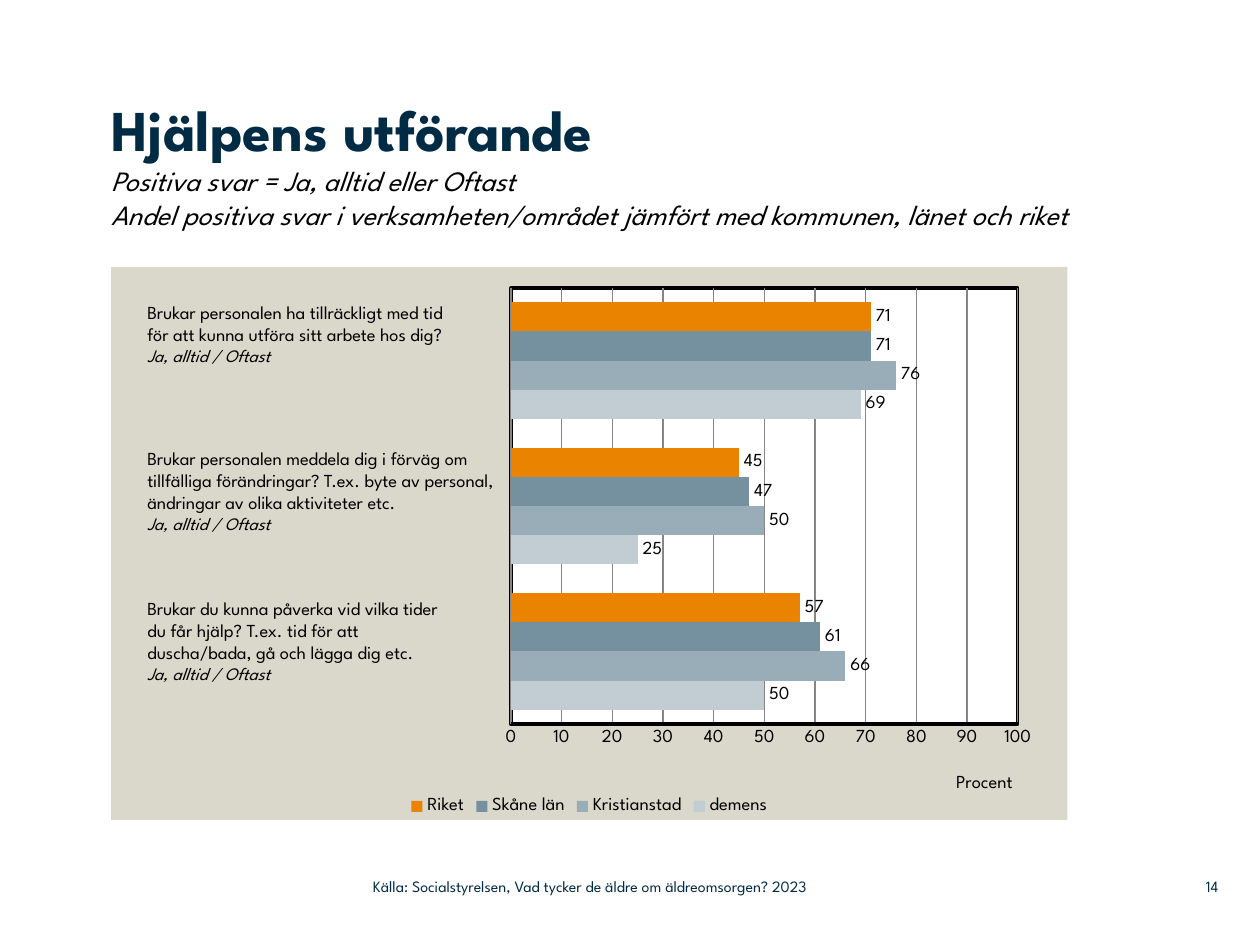
from lxml import etree
from pptx import Presentation
from pptx.chart.data import CategoryChartData
from pptx.dml.color import RGBColor
from pptx.enum import chart as ch, text
from pptx.oxml import parse_xml
from pptx.oxml.ns import nsdecls, qn
from pptx.util import Cm, Pt

FONT = "League Spartan"
COLORS = {"navy": "002B45", "black": "000000", "white": "FFFFFF",
          "panel": "DAD7CB", "grid": "868686"}
TITLE = "Hjälpens utförande"
SUBTITLE = ["Positiva svar = Ja, alltid eller Oftast",
            "Andel positiva svar i verksamheten/området jämfört med "
            "kommunen, länet och riket"]
ANSWER = "Ja, alltid / Oftast"
QUESTIONS = [  # top in cm, lines
    (5.94, ["Brukar personalen ha tillräckligt med tid",
            "för att kunna utföra sitt arbete hos dig?"]),
    (8.89, ["Brukar personalen meddela dig i förväg om tillfälliga "
            "förändringar? T.ex. byte av personal, ändringar av olika "
            "aktiviteter etc."]),
    (11.91, ["Brukar du kunna påverka vid vilka tider",
             "du får hjälp? T.ex. tid för att",
             "duscha/bada, gå och lägga dig etc."]),
]
SERIES = [  # name, values from the bottom group up, colour
    ("demens", (50, 25, 69), "C2CDD3"),
    ("Kristianstad", (66, 50, 76), "99ADB9"),
    ("Skåne län", (61, 47, 71), "75909F"),
    ("Riket", (57, 45, 71), "E98300"),
]
FOOTERS = [  # left, width in cm, alignment, text
    (23.37, 1.19, text.PP_ALIGN.RIGHT, "14"),
    (7.52, 11.25, text.PP_ALIGN.LEFT,
     "Källa: Socialstyrelsen, Vad tycker de äldre om äldreomsorgen? 2023"),
]


def rgb(value):
    return RGBColor.from_string(value)


def style(font, size, color="black", bold=False, italic=False):
    font.name, font.size = FONT, Pt(size)
    font.bold, font.italic = bold, italic
    font.color.rgb = rgb(COLORS[color])


def add_run(p, words, size, **look):
    r = p.add_run()
    r.text = words
    style(r.font, size, **look)


def no_margins(tf):
    tf.margin_left = tf.margin_right = tf.margin_top = tf.margin_bottom = 0


def add_box(s, left, top, width, height):
    tf = s.shapes.add_textbox(Cm(left), Cm(top), Cm(width), Cm(height)).text_frame
    tf.word_wrap = True
    return tf


def fill_properties(color, line=None):
    border = (f'<a:ln w="25400"><a:solidFill><a:srgbClr val="{line}"/>'
              "</a:solidFill></a:ln>" if line else "<a:ln><a:noFill/></a:ln>")
    return parse_xml(f'<c:spPr {nsdecls("c", "a")}><a:solidFill>'
                     f'<a:srgbClr val="{color}"/></a:solidFill>{border}</c:spPr>')


def set_layout(parent, index, **settings):
    """Place a chart part by fractions of the chart, as child number index."""
    for old in parent.findall(qn("c:layout")):
        parent.remove(old)
    layout = etree.Element(qn("c:layout"))
    manual = etree.SubElement(layout, qn("c:manualLayout"))
    for name, value in settings.items():
        etree.SubElement(manual, qn(f"c:{name}")).set("val", str(value))
    parent.insert(index, layout)


def add_title(s):
    sp = s.shapes.title
    sp.left, sp.top, sp.width, sp.height = Cm(2.24), Cm(1.9), Cm(19.79), Cm(3.07)
    tf = sp.text_frame
    no_margins(tf)
    tf.word_wrap = True
    tf.auto_size = text.MSO_AUTO_SIZE.NONE
    tf.vertical_anchor = text.MSO_ANCHOR.TOP
    p = tf.paragraphs[0]
    p.alignment = text.PP_ALIGN.LEFT
    add_run(p, TITLE, 33, color="navy", bold=True)
    for line in SUBTITLE:
        p.add_line_break()
        add_run(p, line, 16, italic=True)


def add_bars(s):
    data = CategoryChartData()
    data.categories = ["1", "2", "3"]
    for name, values, _ in SERIES:
        data.add_series(name, values)
    chart = s.shapes.add_chart(ch.XL_CHART_TYPE.BAR_CLUSTERED, Cm(2.24), Cm(5.38),
                               Cm(19.28), Cm(11.15), data).chart
    style(chart.font, 10.5)
    chart.has_title = False
    chart.has_legend = True
    chart.legend.position = ch.XL_LEGEND_POSITION.BOTTOM
    chart.legend.include_in_layout = False
    style(chart.legend.font, 10.5)

    plot = chart.plots[0]
    plot.gap_width, plot.overlap, plot.vary_by_categories = 100, 0, False
    for series, (_, _, color) in zip(plot.series, SERIES):
        series.format.fill.solid()
        series.format.fill.fore_color.rgb = rgb(color)
        labels = series.data_labels
        labels.show_value = True
        labels.position = ch.XL_LABEL_POSITION.OUTSIDE_END
        style(labels.font, 10.5)

    chart.category_axis.visible = False
    axis = chart.value_axis
    axis.minimum_scale, axis.maximum_scale, axis.major_unit = 0, 100, 10
    axis.major_tick_mark = axis.minor_tick_mark = ch.XL_TICK_MARK.NONE
    axis.format.line.color.rgb = rgb(COLORS["black"])
    axis.format.line.width = Pt(2)
    axis.major_gridlines.format.line.color.rgb = rgb(COLORS["grid"])
    axis.major_gridlines.format.line.width = Pt(0.75)
    style(axis.tick_labels.font, 10.5)
    title = axis.axis_title
    add_run(title.text_frame.paragraphs[0], "Procent", 10.5)
    set_layout(title._element, 1, xMode="edge", yMode="edge", x=0.88, y=0.91)

    space = chart._chartSpace
    area = space.chart.plotArea
    set_layout(area, 0, layoutTarget="inner", xMode="edge", yMode="edge",
               x=0.418, y=0.038, w=0.53, h=0.789)
    area.append(fill_properties(COLORS["white"], COLORS["black"]))
    space.chart.addnext(fill_properties(COLORS["panel"]))


def add_questions(s):
    for top, lines in QUESTIONS:
        tf = add_box(s, 2.72, top, 7.58, 2.06)
        for i, line in enumerate(lines + [ANSWER]):
            p = tf.paragraphs[0] if i == 0 else tf.add_paragraph()
            answer = line == ANSWER
            add_run(p, line, 10 if answer else 10.5, italic=answer)


def add_footers(s):
    for left, width, align, words in FOOTERS:
        tf = add_box(s, left, 17.5, width, 0.74)
        no_margins(tf)
        tf.vertical_anchor = text.MSO_ANCHOR.MIDDLE
        p = tf.paragraphs[0]
        p.alignment = align
        add_run(p, words, 9, color="navy")


def main():
    prs = Presentation()
    prs.slide_width, prs.slide_height = Cm(25.4), Cm(19.05)
    s = prs.slides.add_slide(prs.slide_layouts[5])
    add_bars(s)
    add_title(s)
    add_questions(s)
    add_footers(s)
    prs.save("out.pptx")


if __name__ == "__main__":
    main()
